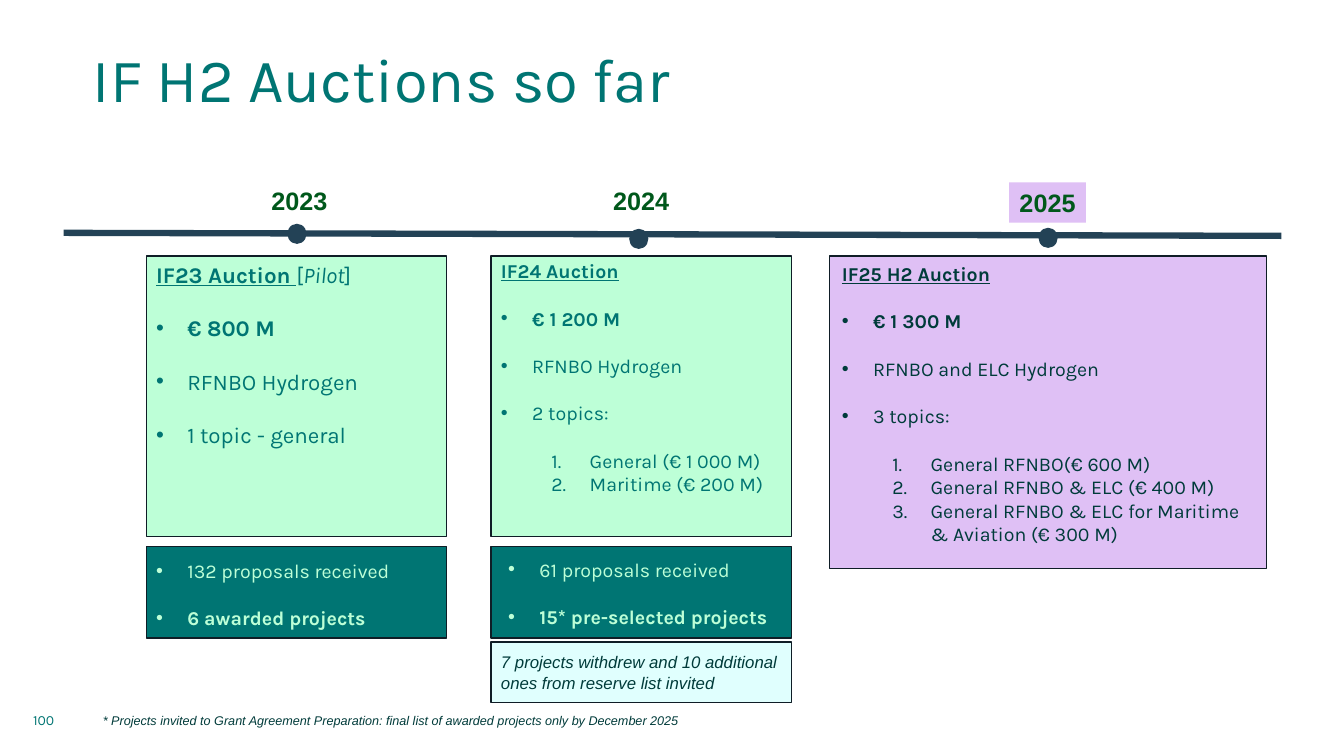
from dataclasses import dataclass

from lxml import etree
from pptx import Presentation
from pptx.dml.color import RGBColor
from pptx.enum.shapes import MSO_CONNECTOR, MSO_SHAPE
from pptx.enum.text import MSO_ANCHOR, MSO_AUTO_SIZE, PP_ALIGN
from pptx.oxml.ns import qn
from pptx.util import Inches, Pt

RECT, OVAL = MSO_SHAPE.RECTANGLE, MSO_SHAPE.OVAL
STRAIGHT = MSO_CONNECTOR.STRAIGHT
TOP, MIDDLE, BOTTOM = MSO_ANCHOR.TOP, MSO_ANCHOR.MIDDLE, MSO_ANCHOR.BOTTOM
LEFT, CENTER = PP_ALIGN.LEFT, PP_ALIGN.CENTER
NO_FIT = MSO_AUTO_SIZE.NONE
INSETS = (0.1, 0.05, 0.1, 0.05)


@dataclass(frozen=True)
class Theme:
    teal: str = "007573"
    dark_teal: str = "003B3A"
    mint: str = "BDFFD7"
    lilac: str = "DFC0F5"
    ice: str = "E0FFFE"
    navy: str = "234256"
    outline: str = "0F1D26"
    year: str = "00581B"
    heading_font: str = "Karla"
    label_font: str = "Arial"
    title_size: int = 44
    year_size: int = 18
    pilot_size: int = 16
    list_size: int = 14
    remark_size: int = 12
    number_size: int = 10
    footnote_size: int = 9


THEME = Theme()


def rgb(value):
    return RGBColor.from_string(value)


def place(shape, box):
    shape.left, shape.top, shape.width, shape.height = map(Inches, box)


def style(paragraph, face, size, color, bold=False, italic=False):
    font = paragraph.font
    font.name, font.size, font.bold, font.italic = face, Pt(size), bold, italic
    font.color.rgb = rgb(color)


def set_bullet(paragraph, tag, margin=0.0, hanging=0.0, **attributes):
    """Give a paragraph its bullet element and hanging indent."""
    properties = paragraph._p.get_or_add_pPr()
    properties.set("marL", str(Inches(margin)))
    properties.set("indent", str(-Inches(hanging)))
    if tag == "a:buChar":
        etree.SubElement(properties, qn("a:buFont"), typeface=THEME.label_font)
    etree.SubElement(properties, qn(tag), **attributes)


def set_frame(shape, anchor=TOP, insets=INSETS, wrap=True):
    frame = shape.text_frame
    frame.auto_size = NO_FIT
    frame.word_wrap = wrap
    frame.vertical_anchor = anchor
    (frame.margin_left, frame.margin_top,
     frame.margin_right, frame.margin_bottom) = map(Inches, insets)
    return frame


def add_block(slide, kind, box, fill, outline=None):
    block = slide.shapes.add_shape(kind, *map(Inches, box))
    block.shadow.inherit = False
    block.fill.solid()
    block.fill.fore_color.rgb = rgb(fill)
    if outline:
        block.line.color.rgb = rgb(outline)
        block.line.width = Pt(1)
    else:
        block.line.fill.background()
    return block


def write_list(frame, items, size, color):
    """Write (text, level, bold) items with a blank line's gap before each new group."""
    previous_level = None
    for text, level, bold in items:
        first = previous_level is None
        if first and not frame.text:
            paragraph = frame.paragraphs[0]
        else:
            paragraph = frame.add_paragraph()
            if level == 0 or previous_level == 0:
                paragraph.space_before = Pt(round(size * 1.19))
        paragraph.text, paragraph.level, paragraph.alignment = text, level, LEFT
        if level:
            set_bullet(paragraph, "a:buAutoNum", 0.88, 0.38, type="arabicPeriod")
        else:
            set_bullet(paragraph, "a:buChar", 0.31, 0.31, char="•")
        style(paragraph, THEME.heading_font, size, color, bold)
        previous_level = level


def add_title(slide, box):
    title = slide.shapes.title
    place(title, box)
    frame = set_frame(title, MIDDLE, (0, 0.05, 0.1, 0))
    heading = frame.paragraphs[0]
    heading.text, heading.alignment, heading.line_spacing = "IF H2 Auctions so far", LEFT, 0.9
    style(heading, THEME.heading_font, THEME.title_size, THEME.teal)


def add_footer(slide, box):
    """Place the page number at the left of the box and the footnote after it."""
    left, top, width, height = box
    number = slide.shapes.add_textbox(*map(Inches, (left, top + 0.01, 0.56, 0.4)))
    page = set_frame(number, BOTTOM).paragraphs[0]
    page.text = "100"
    style(page, THEME.heading_font, THEME.number_size, THEME.teal)

    footnote = slide.placeholders[1]
    place(footnote, (left + 0.69, top, width - 0.69, height))
    note = set_frame(footnote, MIDDLE).paragraphs[0]
    note.text = ("* Projects invited to Grant Agreement Preparation: "
                 "final list of awarded projects only by December 2025")
    note.space_before, note.line_spacing = Pt(0), 0.9
    set_bullet(note, "a:buNone")
    style(note, THEME.label_font, THEME.footnote_size, THEME.dark_teal, italic=True)


def add_timeline(slide, box):
    """Draw the axis, with a dot and a year label for each auction."""
    left, top, width, height = box
    axis_top = top + 0.52
    axis = slide.shapes.add_connector(
        STRAIGHT, *map(Inches, (left, axis_top, left + width, axis_top + 0.03)))
    axis.line.color.rgb = rgb(THEME.navy)
    axis.line.width = Pt(4.5)
    etree.SubElement(axis._element.spPr, qn("a:effectLst"))

    milestones = [("2023", 2.22, 0.43, 1.96, 0, None),
                  ("2024", 5.61, 0.48, 5.35, 0, None),
                  ("2025", 9.67, 0.47, 9.38, 0.02, THEME.lilac)]
    for year, dot_left, dot_top, label_left, label_top, fill in milestones:
        add_block(slide, OVAL, (left + dot_left, top + dot_top, 0.19, 0.2), THEME.navy)
        label_box = (left + label_left, top + label_top, 0.76, 0.4)
        if fill:
            label = add_block(slide, RECT, label_box, fill)
        else:
            label = slide.shapes.add_textbox(*map(Inches, label_box))
        text = set_frame(label, wrap=False).paragraphs[0]
        text.text, text.alignment = year, CENTER
        style(text, THEME.label_font, THEME.year_size, THEME.year, bold=True)


def add_auction(slide, box, heading, items, size, color, fill, insets=INSETS, suffix=()):
    """Draw an auction panel; suffix holds (text, italic) runs after the heading."""
    panel = add_block(slide, RECT, box, fill, THEME.outline)
    frame = set_frame(panel, insets=insets)
    first = frame.paragraphs[0]
    first.alignment = LEFT
    style(first, THEME.heading_font, size, color)
    name = first.add_run()
    name.text, name.font.bold, name.font.underline = heading, True, True
    for text, italic in suffix:
        run = first.add_run()
        run.text, run.font.italic = text, italic
    write_list(frame, items, size, color)


def add_outcome(slide, box, received, selected, insets):
    panel = add_block(slide, RECT, box, THEME.teal, THEME.outline)
    write_list(set_frame(panel, insets=insets), [(received, 0, False), (selected, 0, True)],
               THEME.list_size, THEME.mint)


def add_remark(slide, box):
    panel = add_block(slide, RECT, box, THEME.ice, THEME.outline)
    remark = set_frame(panel, MIDDLE).paragraphs[0]
    remark.text = "7 projects withdrew and 10 additional ones from reserve list invited"
    remark.alignment = LEFT
    style(remark, THEME.label_font, THEME.remark_size, THEME.dark_teal, italic=True)


def build_auctions_slide(deck):
    slide = deck.slides.add_slide(deck.slide_layouts[1])
    add_title(slide, (0.92, 0.34, 11.5, 0.91))
    add_timeline(slide, (0.63, 1.79, 12.08, 0.9))

    top, width, height = 2.54, 2.98, 2.78
    pilot_left, second_left, third_left = 1.45, 4.87, 8.23
    add_auction(slide, (pilot_left, top, width, height), "IF23 Auction ",
                [("€ 800 M", 0, True), ("RFNBO Hydrogen", 0, False),
                 ("1 topic - general", 0, False)],
                THEME.pilot_size, THEME.teal, THEME.mint,
                suffix=[("[", False), ("Pilot", True), ("]", False)])
    add_auction(slide, (second_left, top, width, height), "IF24 Auction",
                [("€ 1 200 M", 0, True), ("RFNBO Hydrogen", 0, False), ("2 topics:", 0, False),
                 ("General (€ 1 000 M)", 1, False), ("Maritime (€ 200 M)", 1, False)],
                THEME.list_size, THEME.teal, THEME.mint, (0.1, 0.03, 0.1, 0.05))
    add_auction(slide, (third_left, top, 4.33, 3.1), "IF25 H2 Auction",
                [("€ 1 300 M", 0, True), ("RFNBO and ELC Hydrogen", 0, False),
                 ("3 topics:", 0, False), ("General RFNBO(€ 600 M)", 1, False),
                 ("General RFNBO & ELC (€ 400 M)", 1, False),
                 ("General RFNBO & ELC for Maritime & Aviation (€ 300 M)", 1, False)],
                THEME.list_size, THEME.dark_teal, THEME.lilac, (0.12, 0.06, 0.08, 0.05))

    outcome_top = top + height + 0.1
    add_outcome(slide, (pilot_left, outcome_top, width, 0.91), "132 proposals received",
                "6 awarded projects", (0.1, 0.12, 0.1, 0))
    add_outcome(slide, (second_left, outcome_top, width, 0.91), "61 proposals received",
                "15* pre-selected projects", (0.17, 0.11, 0.03, 0))
    add_remark(slide, (second_left, outcome_top + 0.95, width, 0.6))
    add_footer(slide, (0.23, 6.86, 11.52, 0.59))


def main():
    deck = Presentation()
    deck.slide_width, deck.slide_height = Inches(13.33), Inches(7.5)
    build_auctions_slide(deck)
    deck.save("out.pptx")


if __name__ == "__main__":
    main()
